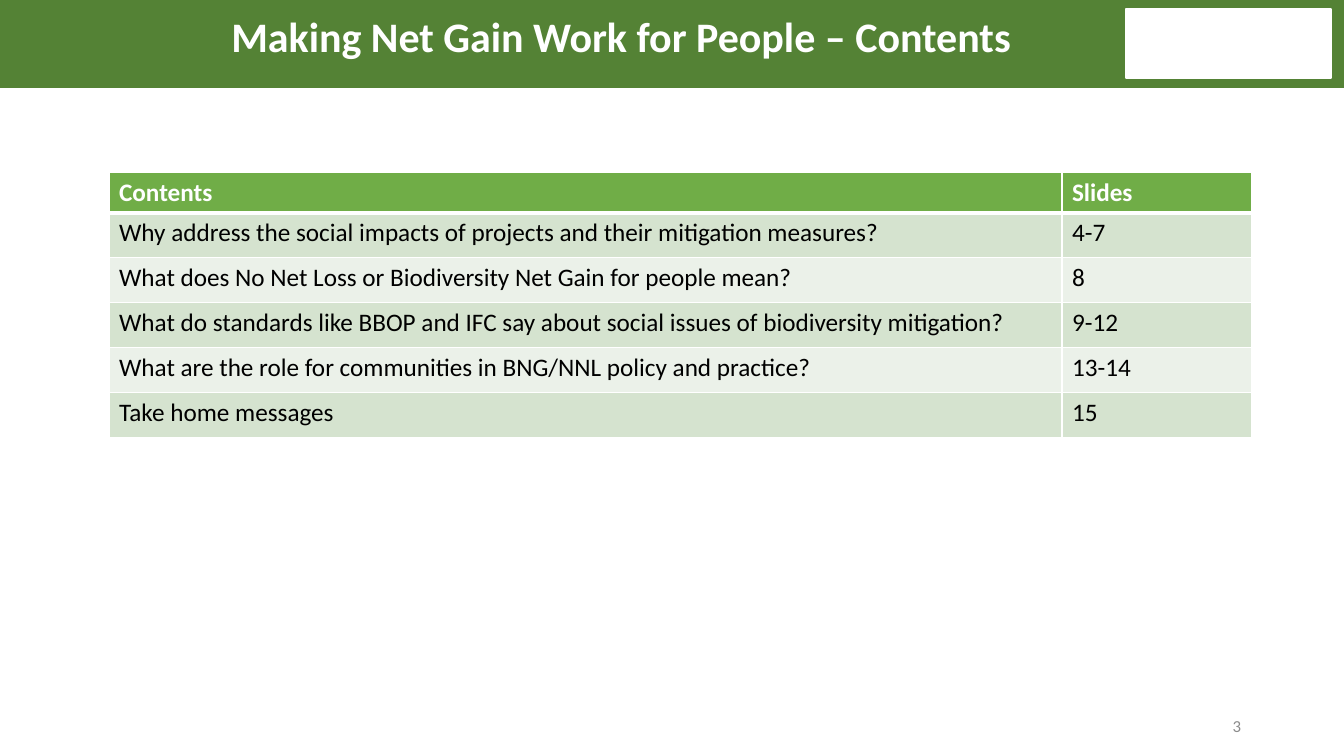
from lxml.etree import SubElement
from pptx import Presentation
from pptx.dml.color import RGBColor
from pptx.enum.shapes import MSO_SHAPE as Shape
from pptx.enum.text import MSO_ANCHOR as Anchor, PP_ALIGN as Align
from pptx.oxml.ns import qn
from pptx.util import Pt

EMU_PER_PX = 914400 / 100.8
WHITE = "FFFFFF"
HEADER_GREEN = "70AD47"
BAND_COLOURS = ["D5E3CF", "EBF1E9"]
CONTENTS = [
    ("Contents", "Slides"),
    ("Why address the social impacts of projects and their mitigation measures?", "4-7"),
    ("What does No Net Loss or Biodiversity Net Gain for people mean?", "8"),
    ("What do standards like BBOP and IFC say about social issues of biodiversity mitigation?", "9-12"),
    ("What are the role for communities in BNG/NNL policy and practice?", "13-14"),
    ("Take home messages", "15"),
]


def px(length):
    return round(length * EMU_PER_PX)


def box_emu(box):
    return [px(length) for length in box]


def colour(hex_string):
    return RGBColor.from_string(hex_string)


def write(frame, text, size=18, color="000000", bold=False, align=Align.LEFT,
          anchor=Anchor.TOP, spacing=None):
    frame.word_wrap = True
    frame.vertical_anchor = anchor
    paragraph = frame.paragraphs[0]
    paragraph.alignment = align
    paragraph.line_spacing = spacing
    run = paragraph.add_run()
    run.text = text
    run.font.name = "Calibri"
    run.font.size = Pt(size)
    run.font.bold = bold
    run.font.color.rgb = colour(color)


def add_panel(slide, box, fill, line=None):
    panel = slide.shapes.add_shape(Shape.RECTANGLE, *box_emu(box))
    panel.shadow.inherit = False
    panel.fill.solid()
    panel.fill.fore_color.rgb = colour(fill)
    if line:
        panel.line.color.rgb = colour(line)
        panel.line.width = Pt(1)
    else:
        panel.line.fill.background()


def add_banner(slide, box):
    """Green band with the title and a white panel at its right end."""
    left, top, width, height = box
    add_panel(slide, box, "548235")
    add_panel(slide, (left + width - 218, top + 12, 205, 69), WHITE, line=WHITE)

    title = slide.shapes.title
    title.element.getparent().append(title.element)  # bring in front of the band
    title.left, title.top, title.width, title.height = box_emu(
        (left + 100, top + 3, 1043, height - 13))
    write(title.text_frame, "Making Net Gain Work for People – Contents", size=30,
          color=WHITE, bold=True, align=Align.CENTER, anchor=Anchor.MIDDLE, spacing=0.9)


def set_borders(cell, bottom_width):
    properties = cell._tc.get_or_add_tcPr()
    for side, width in (("L", 1), ("R", 1), ("T", 1), ("B", bottom_width)):
        border = SubElement(properties, qn(f"a:ln{side}"), w=str(Pt(width)))
        SubElement(SubElement(border, qn("a:solidFill")), qn("a:srgbClr"), val=WHITE)


def add_contents_table(slide, box, slides_width=190, header_height=40):
    width, height = box[2:]
    table = slide.shapes.add_table(len(CONTENTS), 2, *box_emu(box)).table
    table.columns[0].width = px(width - slides_width)
    table.columns[1].width = px(slides_width)
    entry_height = (height - header_height) / (len(CONTENTS) - 1)
    for index, entry in enumerate(CONTENTS):
        header = index == 0
        table.rows[index].height = px(header_height if header else entry_height)
        for cell, text in zip(table.rows[index].cells, entry):
            set_borders(cell, bottom_width=3 if header else 1)
            cell.fill.solid()
            cell.fill.fore_color.rgb = colour(
                HEADER_GREEN if header else BAND_COLOURS[(index - 1) % 2])
            write(cell.text_frame, text, color=WHITE if header else "000000", bold=header)


def add_page_number(slide, box):
    number = slide.shapes.add_textbox(*box_emu(box))
    write(number.text_frame, "3", size=12, color="8C8C8C", align=Align.RIGHT,
          anchor=Anchor.MIDDLE)


def main():
    deck = Presentation()
    deck.slide_width, deck.slide_height = px(1344), px(756)
    slide = deck.slides.add_slide(deck.slide_layouts.get_by_name("Title Only"))
    add_page_number(slide, (1163, 710, 88, 31))
    add_banner(slide, (0, -3, 1344, 91))
    add_contents_table(slide, (109, 172, 1143, 265))
    deck.save("out.pptx")


if __name__ == "__main__":
    main()
